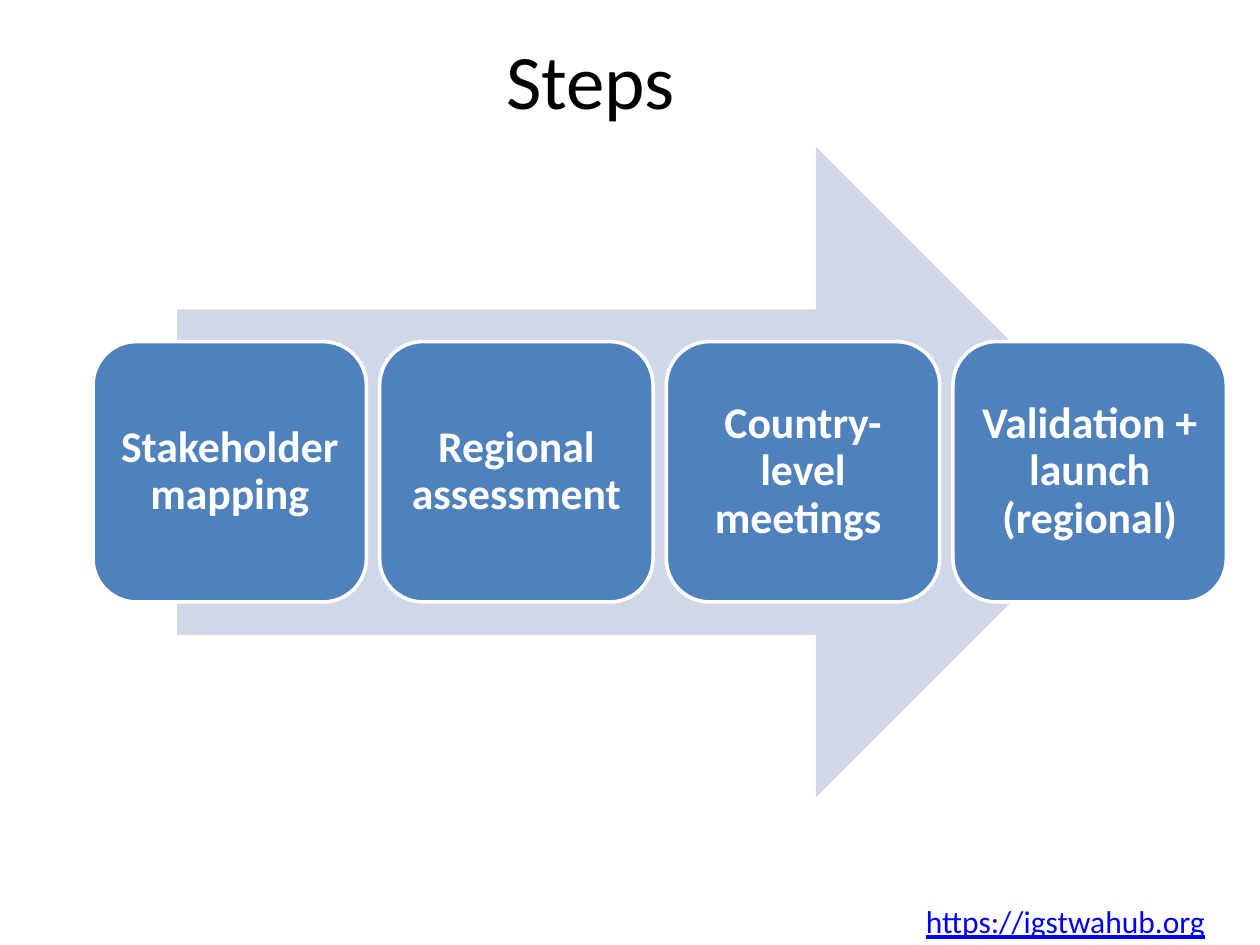
"""Build the "Steps" slide: four stages in a row on a large arrow."""
from pptx import Presentation
from pptx import util as u
from pptx.dml.color import RGBColor
from pptx.enum import shapes, text


def color(value):
    return RGBColor.from_string(value)


def write(box, words, size, ink, align, bold=False):
    frame = box.text_frame
    frame.word_wrap = True
    frame.vertical_anchor = text.MSO_ANCHOR.MIDDLE
    para = frame.paragraphs[0]
    para.text = words
    para.alignment = align
    para.font.name = "Calibri"
    para.font.size = u.Pt(size)
    para.font.bold = bold
    para.font.color.rgb = color(ink)
    return para


deck = Presentation()
deck.slide_width, deck.slide_height = u.Pt(720), u.Pt(540)
page = deck.slides.add_slide(deck.slide_layouts[6])

title = page.shapes.add_textbox(u.Pt(94.5), u.Pt(0), u.Pt(486), u.Pt(90))
write(title, "Steps", 44, "000000", text.PP_ALIGN.CENTER)

address = page.shapes.add_textbox(u.Pt(522), u.Pt(512), u.Pt(181), u.Pt(29))
address.fill.solid()
address.fill.fore_color.rgb = color("FFFFFF")
para = write(address, "https://igstwahub.org", 18, "0000FF", text.PP_ALIGN.LEFT)
para.font.underline = True
address.text_frame.vertical_anchor = text.MSO_ANCHOR.TOP

arrow = page.shapes.add_shape(
    shapes.MSO_SHAPE.RIGHT_ARROW, u.Pt(101.2), u.Pt(83.8), u.Pt(551), u.Pt(372))
arrow.shadow.inherit = False
arrow.fill.solid()
arrow.fill.fore_color.rgb = color("D0D8E8")
arrow.line.fill.background()

steps = ["Stakeholder mapping", "Regional assessment",
         "Country-level meetings ", "Validation + launch (regional)"]
first_left, pitch = 53.2, 163.8
for index, step in enumerate(steps):
    card = page.shapes.add_shape(
        shapes.MSO_SHAPE.ROUNDED_RECTANGLE,
        u.Pt(first_left + index * pitch), u.Pt(195.2), u.Pt(156.2), u.Pt(148.8))
    card.shadow.inherit = False
    card.fill.solid()
    card.fill.fore_color.rgb = color("4F81BD")
    card.line.color.rgb = color("FFFFFF")
    card.line.width = u.Pt(2)
    para = write(card, step, 25, "FFFFFF", text.PP_ALIGN.CENTER, bold=True)
    para.line_spacing = 0.9
    frame = card.text_frame
    frame.margin_left = frame.margin_right = u.Pt(7)
    frame.margin_top = frame.margin_bottom = u.Pt(7)

deck.save("out.pptx")
